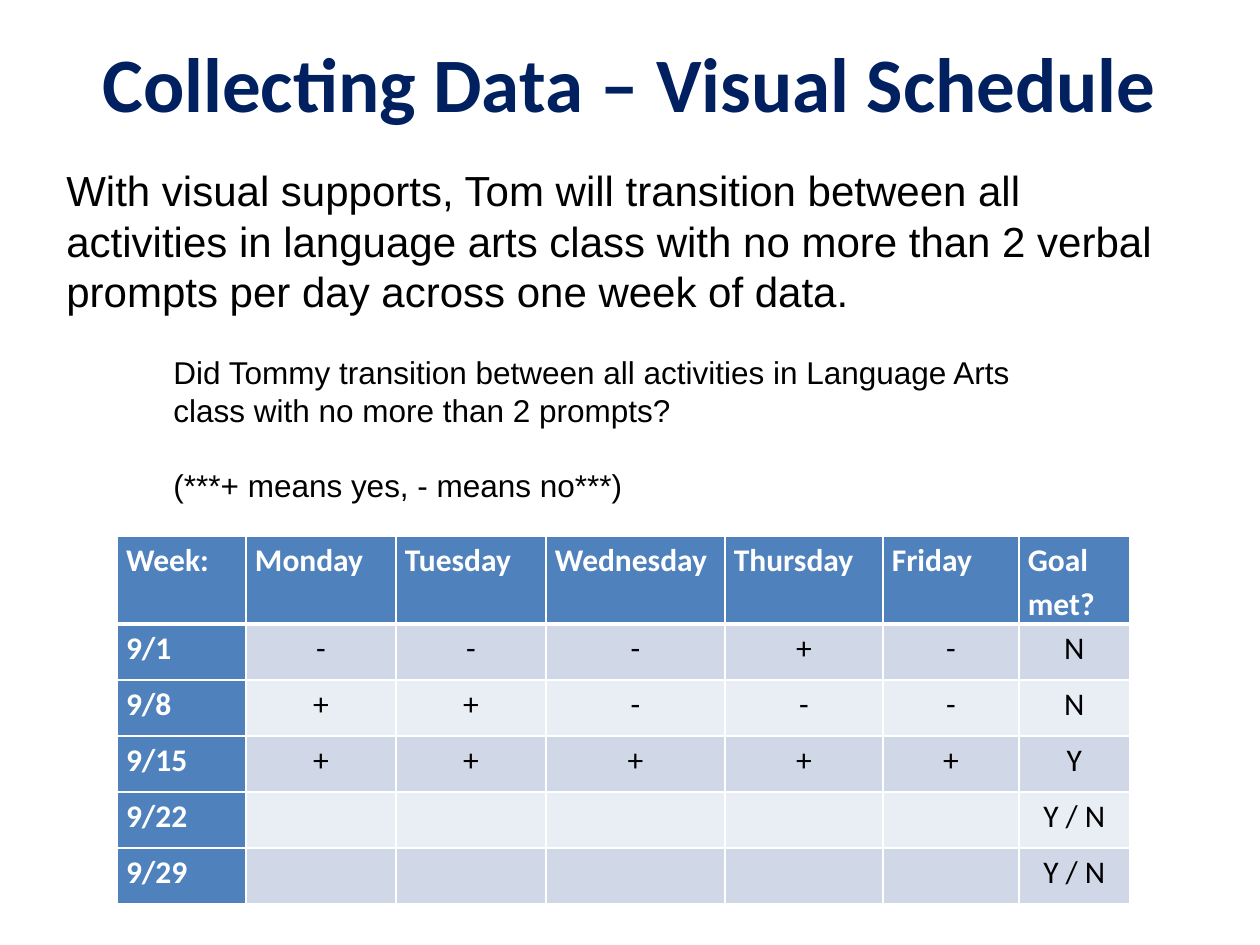
from lxml import etree
from pptx import Presentation
from pptx import util as u
from pptx.dml.color import RGBColor
from pptx.enum import text
from pptx.oxml import ns

SCALE = 914400 / 126  # EMU in one px
NAVY = RGBColor(0x00, 0x20, 0x60)
BLUE = RGBColor(0x4F, 0x81, 0xBD)
BANDS = RGBColor(0xD0, 0xD8, 0xE8), RGBColor(0xE9, 0xED, 0xF4)
WHITE = RGBColor(0xFF, 0xFF, 0xFF)
BLACK = RGBColor(0x00, 0x00, 0x00)

LEFT, MID = text.PP_ALIGN.LEFT, text.PP_ALIGN.CENTER
TOP, CENTER = text.MSO_ANCHOR.TOP, text.MSO_ANCHOR.MIDDLE

HEAD = {"name": "Calibri", "size": u.Pt(44), "bold": True}
BODY = {"name": "Arial", "size": u.Pt(24)}
NOTE = {"name": "Arial", "size": u.Pt(18)}
LABEL = {"name": "Calibri", "size": u.Pt(18), "bold": True}
MARK = {"name": "Calibri", "size": u.Pt(18), "bold": False}

GOAL = [
    "With visual supports, Tom will transition between all",
    "activities in language arts class with no more than 2 verbal",
    "prompts per day across one week of data.",
]
ASK = [
    "Did Tommy transition between all activities in Language Arts "
    "class with no more than 2 prompts?",
    "(***+ means yes, - means no***)",
]
WEEKS = [
    ["Week:", "Monday", "Tuesday", "Wednesday", "Thursday", "Friday", "Goal met?"],
    ["9/1", "-", "-", "-", "+", "-", "N"],
    ["9/8", "+", "+", "-", "-", "-", "N"],
    ["9/15", "+", "+", "+", "+", "+", "Y"],
    ["9/22", "", "", "", "", "", "Y / N"],
    ["9/29", "", "", "", "", "", "Y / N"],
]
WIDTHS = [129, 150, 150, 179, 158, 136, 111]
HEIGHTS = [88] + [56] * 5


def px(n):
    return u.Emu(round(n * SCALE))


def put(obj, vals):
    for key, val in vals.items():
        setattr(obj, key, val)


def write(para, words, font, color, form):
    put(para, form)
    run = para.add_run()
    run.text = words
    put(run.font, font)
    run.font.color.rgb = color


def add_text(slide, box, lines, font, color, anchor=TOP, align=LEFT, gap=0):
    frame = slide.shapes.add_textbox(*map(px, box)).text_frame
    put(frame, {"word_wrap": True, "vertical_anchor": anchor})
    for i, line in enumerate(lines):
        para = frame.add_paragraph() if i else frame.paragraphs[0]
        form = {"alignment": align, "space_before": u.Pt(gap if i else 0)}
        write(para, line, font, color, form)


def add_edges(cell, sizes):
    props = cell._tc.get_or_add_tcPr()
    for side, size in zip("LRTB", sizes):
        line = etree.SubElement(props, ns.qn("a:ln" + side), w=str(u.Pt(size)))
        fill = etree.SubElement(line, ns.qn("a:solidFill"))
        etree.SubElement(fill, ns.qn("a:srgbClr"), val=str(WHITE))


def add_cell(cell, words, row, col):
    label = row == 0 or col == 0
    # The rule under the header is thicker than the others
    add_edges(cell, (1, 1, 3 if row == 1 else 1, 3 if row == 0 else 1))
    cell.fill.solid()
    cell.fill.fore_color.rgb = BLUE if label else BANDS[(row - 1) % 2]
    put(cell, {"margin_left": px(9), "margin_right": px(9),
               "margin_top": 0, "margin_bottom": 0})
    if words:
        form = {"alignment": LEFT if label else MID,
                "line_spacing": 1.15, "space_after": u.Pt(10)}
        write(cell.text_frame.paragraphs[0], words, LABEL if label else MARK,
              WHITE if label else BLACK, form)


def add_grid(slide, left, top):
    box = left, top, sum(WIDTHS), sum(HEIGHTS)
    grid = slide.shapes.add_table(len(HEIGHTS), len(WIDTHS), *map(px, box)).table
    put(grid, {"first_row": False, "horz_banding": False})
    for col, width in zip(grid.columns, WIDTHS):
        col.width = px(width)
    for row, height in zip(grid.rows, HEIGHTS):
        row.height = px(height)
    for r, week in enumerate(WEEKS):
        for c, words in enumerate(week):
            add_cell(grid.cell(r, c), words, r, c)


def main():
    deck = Presentation()
    put(deck, {"slide_width": px(1260), "slide_height": px(945)})
    slide = deck.slides.add_slide(deck.slide_layouts[6])
    # Title
    add_text(slide, (63, 38, 1134, 88), ["Collecting Data – Visual Schedule"],
             HEAD, NAVY, CENTER, MID)
    # Weekly record
    add_grid(slide, 117, 536)
    # Goal, then the question with its key one line below
    add_text(slide, (54, 158, 1134, 165), GOAL, BODY, BLACK, CENTER)
    add_text(slide, (161, 347, 924, 165), ASK, NOTE, BLACK, gap=21)
    deck.save("out.pptx")


if __name__ == "__main__":
    main()
